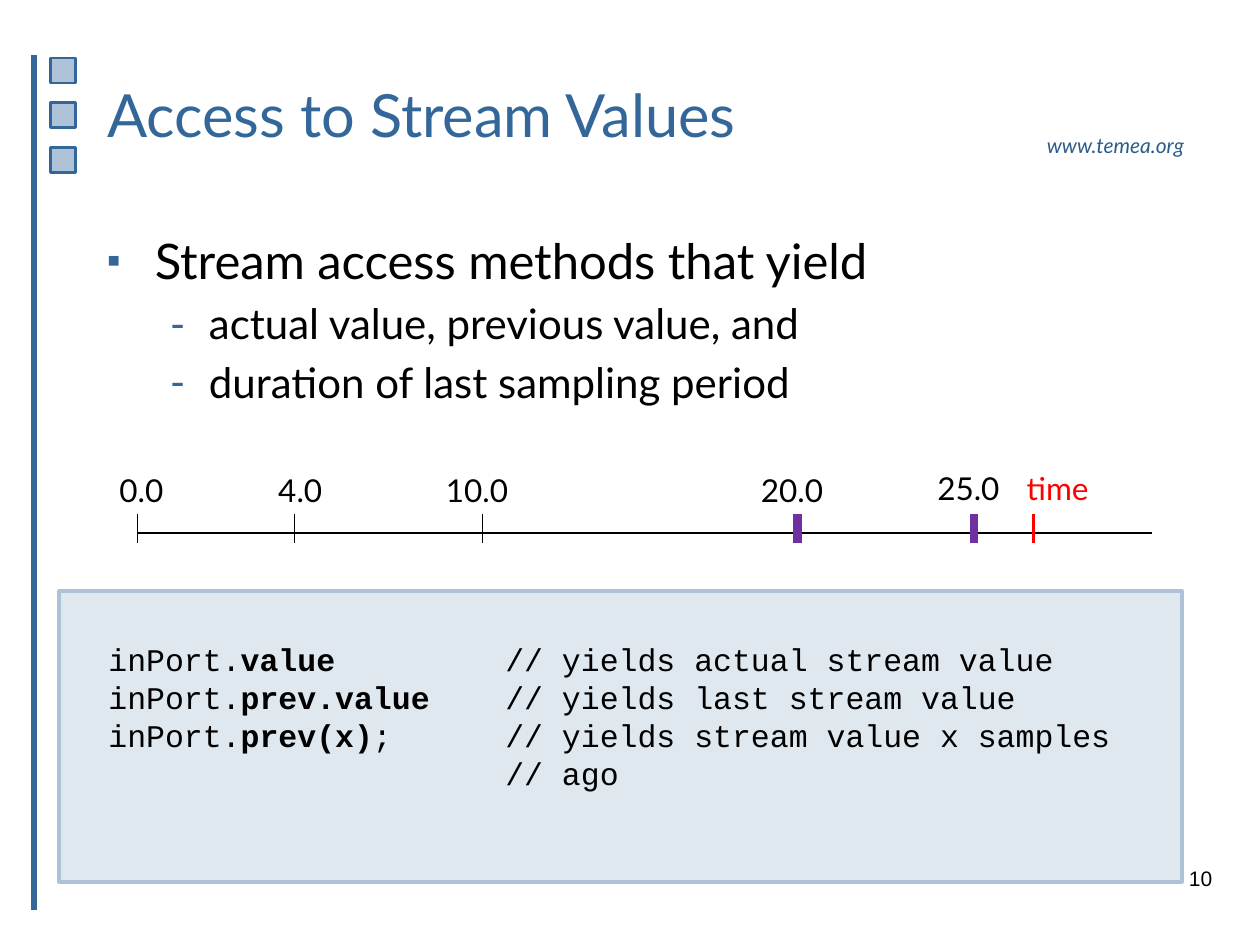
import pptx
import pptx.dml.color
import pptx.enum.shapes
import pptx.enum.text
import pptx.oxml
import pptx.oxml.ns
import pptx.util

Inches = pptx.util.Inches
Pt = pptx.util.Pt
ALIGN = pptx.enum.text.PP_ALIGN
ANCHOR = pptx.enum.text.MSO_ANCHOR

COLORS = {
    "blue": "336699", "link": "2D5C8A", "square": "AEC3D7",
    "panel": "DFE7EF", "border": "AEC2D7", "black": "000000",
    "purple": "7030A0", "red": "FF0000",
}
TITLE = "Access to Stream Values"
BULLETS = [
    (0, "Stream access methods that yield"),
    (1, "actual value, previous value, and"),
    (1, "duration of last sampling period"),
]
BULLET_LEVELS = [
    {"char": "▪", "font": "Arial", "scale": 80, "size": 28,
     "left": 0.38, "hanging": 0.38, "before": 0},
    {"char": "-", "font": "Lato", "scale": 100, "size": 24,
     "left": 0.81, "hanging": 0.31, "before": 4.8},
]
TICKS = [
    (1.09, "black", 0.75), (2.34, "black", 0.75), (3.83, "black", 0.75),
    (6.33, "purple", 5), (7.73, "purple", 5), (8.2, "red", 1.75),
]
TICK_LABELS = [
    ("0.0", 0.85, 3.69, 0.56, "black"),
    ("4.0", 2.11, 3.69, 0.55, "black"),
    ("10.0", 3.44, 3.69, 0.69, "black"),
    ("20.0", 5.94, 3.69, 0.69, "black"),
    ("25.0", 7.34, 3.67, 0.69, "black"),
    ("time", 8.05, 3.67, 0.69, "red"),
]
CODE_LINES = [
    ("inPort.", "value", "\t // yields actual stream value"),
    ("inPort.", "prev.value", "\t // yields last stream value"),
    ("inPort.", "prev(x)", ";\t // yields stream value x samples"),
    ("", "", "\t // ago"),
]


def rgb(color):
    return pptx.dml.color.RGBColor.from_string(COLORS[color])


def add_element(parent, tag, **attributes):
    element = pptx.oxml.parse_xml(f"<a:{tag} {pptx.oxml.ns.nsdecls('a')}/>")
    for name, value in attributes.items():
        element.set(name, str(value))
    parent.append(element)
    return element


def format_font(font, name, size, color, bold=False, italic=False):
    font.name, font.size, font.bold, font.italic = name, Pt(size), bold, italic
    font.color.rgb = rgb(color)


def add_line(slide, start, end, color, width):
    line = slide.shapes.add_connector(
        pptx.enum.shapes.MSO_CONNECTOR.STRAIGHT, *map(Inches, start + end))
    line.line.color.rgb = rgb(color)
    line.line.width = Pt(width)
    add_element(line._element.spPr, "effectLst")


def add_rectangle(slide, box, fill, border, width):
    shape = slide.shapes.add_shape(
        pptx.enum.shapes.MSO_SHAPE.RECTANGLE, *map(Inches, box))
    shape.shadow.inherit = False
    shape.fill.solid()
    shape.fill.fore_color.rgb = rgb(fill)
    shape.line.color.rgb = rgb(border)
    shape.line.width = Pt(width)
    return shape


def add_label(slide, box, text, font, size, color, align=ALIGN.LEFT, italic=False):
    text_frame = slide.shapes.add_textbox(*map(Inches, box)).text_frame
    text_frame.word_wrap = True
    if align == ALIGN.LEFT:
        text_frame.margin_right = 0
    text_frame.text = text
    paragraph = text_frame.paragraphs[0]
    paragraph.alignment = align
    format_font(paragraph.runs[0].font, font, size, color, italic=italic)


def add_title(slide):
    title = slide.shapes.title
    title.left, title.top, title.width, title.height = map(Inches, (0.75, 0.28, 7.32, 1.25))
    text_frame = title.text_frame
    text_frame.text = TITLE
    text_frame.vertical_anchor = ANCHOR.MIDDLE
    text_frame.auto_size = pptx.enum.text.MSO_AUTO_SIZE.NONE
    paragraph = text_frame.paragraphs[0]
    paragraph.alignment = ALIGN.LEFT
    format_font(paragraph.runs[0].font, "Lato", 34, "blue")


def add_bullets(slide):
    text_frame = slide.shapes.add_textbox(*map(Inches, (0.75, 1.78, 8.98, 1.73))).text_frame
    text_frame.word_wrap = True
    text_frame.text = "\n".join(text for _, text in BULLETS)
    for paragraph, (level, _) in zip(text_frame.paragraphs, BULLETS):
        style = BULLET_LEVELS[level]
        paragraph.level = level
        properties = paragraph._p.get_or_add_pPr()
        properties.set("marL", str(Inches(style["left"])))
        properties.set("indent", str(-Inches(style["hanging"])))
        bullet_color = add_element(properties, "buClr")
        add_element(bullet_color, "srgbClr", val=COLORS["blue"])
        add_element(properties, "buSzPct", val=style["scale"] * 1000)
        add_element(properties, "buFont", typeface=style["font"])
        add_element(properties, "buChar", char=style["char"])
        paragraph.space_before = Pt(style["before"])
        format_font(paragraph.runs[0].font, "Lato", style["size"], "black")


def add_code(slide):
    panel = add_rectangle(slide, (0.47, 4.69, 8.91, 2.31), "panel", "border", 2)
    text_frame = panel.text_frame
    text_frame.word_wrap = True
    text_frame.vertical_anchor = ANCHOR.TOP
    for side in ("left", "top", "right", "bottom"):
        setattr(text_frame, f"margin_{side}", Inches(0.39))
    for index, (prefix, method, comment) in enumerate(CODE_LINES):
        paragraph = text_frame.add_paragraph() if index else text_frame.paragraphs[0]
        paragraph.alignment = ALIGN.LEFT
        tabs = add_element(paragraph._p.get_or_add_pPr(), "tabLst")
        add_element(tabs, "tab", pos=Inches(3), algn="l")
        for text, bold in ((prefix, False), (method, True), (comment, False)):
            if text:
                run = paragraph.add_run()
                run.text = text
                format_font(run.font, "Courier New", 18, "black", bold=bold)


def main():
    presentation = pptx.Presentation()
    presentation.slide_width, presentation.slide_height = Inches(10), Inches(7.5)
    slide = presentation.slides.add_slide(presentation.slide_layouts.get_by_name("Title Only"))

    add_line(slide, (0.27, 0.44), (0.27, 7.22), "blue", 3)
    for row in range(3):
        add_rectangle(slide, (0.4, 0.46 + 0.355 * row, 0.2, 0.2), "square", "blue", 1.5)
    add_label(slide, (8.21, 1, 1.56, 0.3), "www.temea.org", "Lato", 12, "link", italic=True)
    add_title(slide)
    add_bullets(slide)
    add_label(slide, (7.39, 6.82, 2.33, 0.39), "10", "Arial", 12, "black", align=ALIGN.RIGHT)
    add_code(slide)

    add_line(slide, (1.09, 4.23), (9.14, 4.23), "black", 0.75)
    for x, color, width in TICKS:
        add_line(slide, (x, 4.31), (x, 4.08), color, width)
    for text, left, top, width, color in TICK_LABELS:
        add_label(slide, (left, top, width, 0.4), text, "Lato", 18, color)

    presentation.save("out.pptx")


if __name__ == "__main__":
    main()
